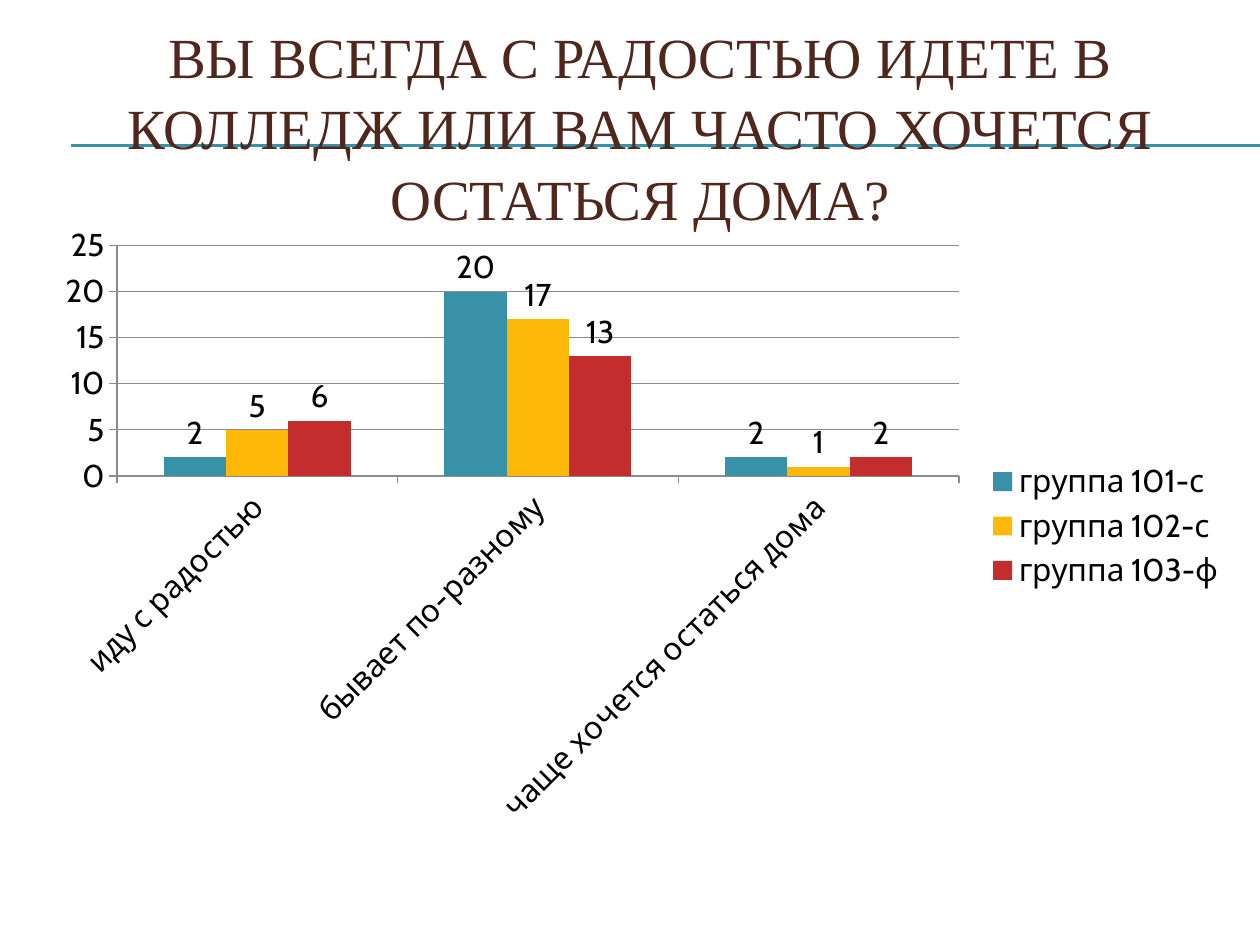
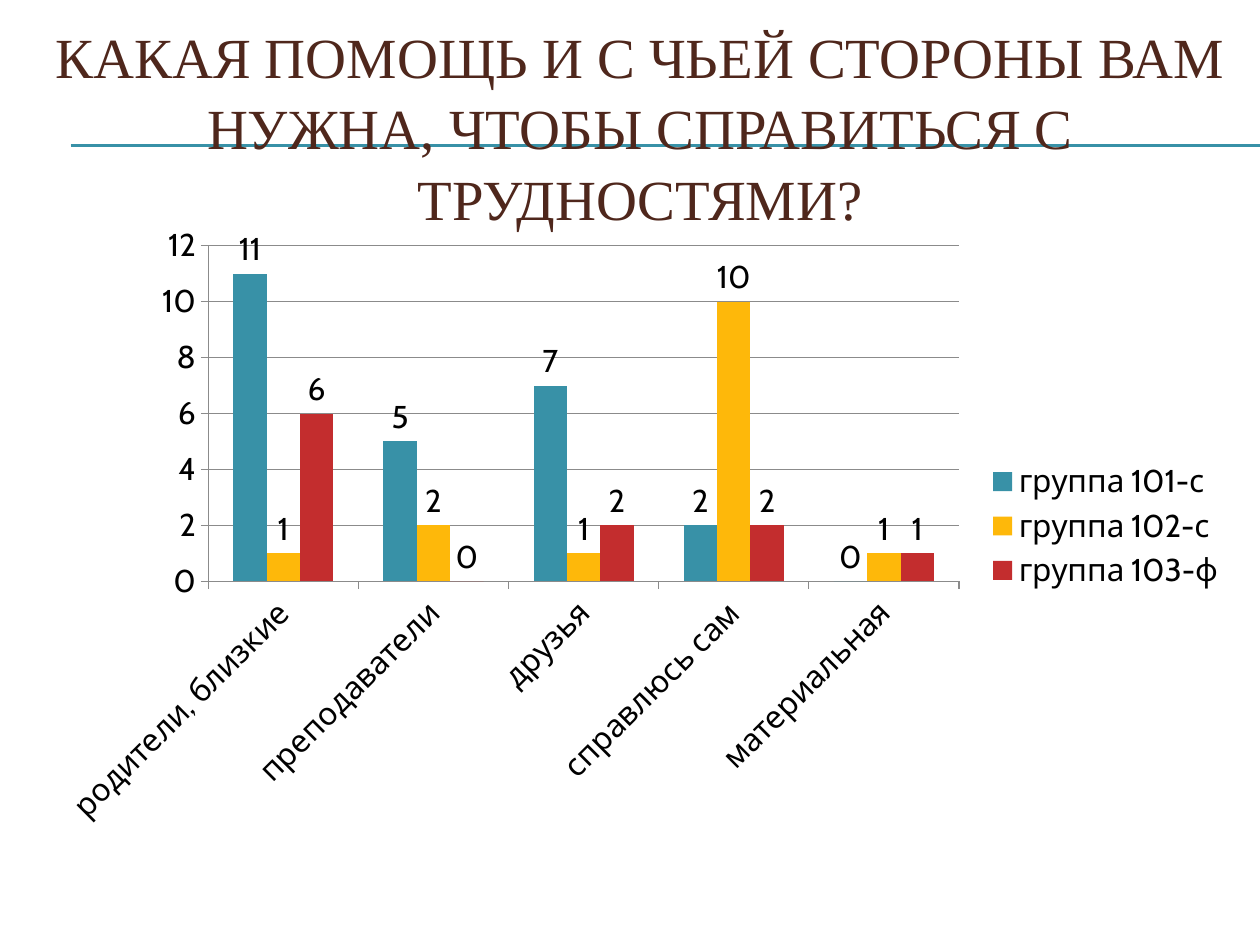
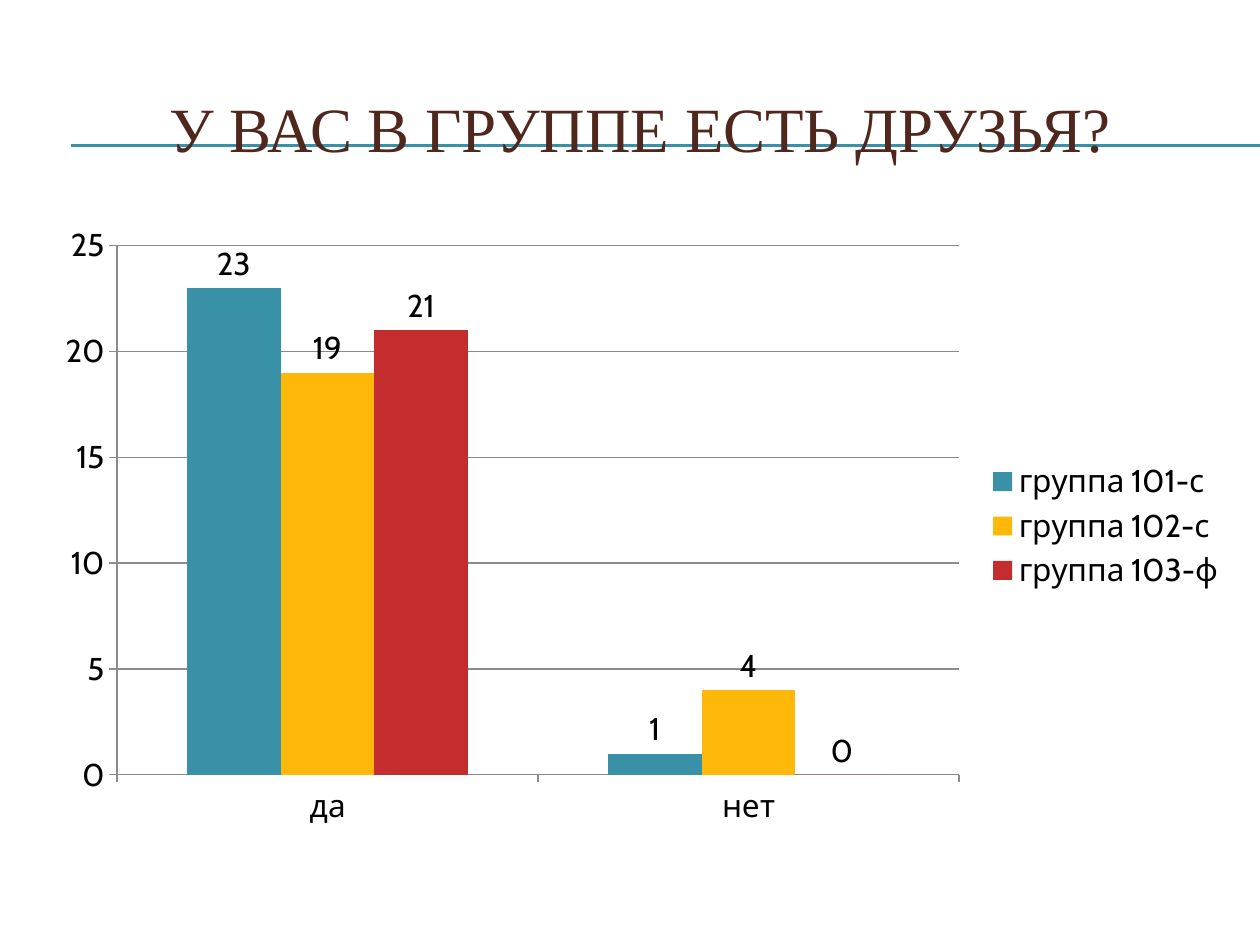
from dataclasses import dataclass

from lxml import etree
from pptx import Presentation
from pptx.chart.data import CategoryChartData
from pptx.dml.color import RGBColor
from pptx.enum.chart import (
    XL_CHART_TYPE,
    XL_LABEL_POSITION,
    XL_LEGEND_POSITION,
    XL_TICK_MARK,
)
from pptx.enum.shapes import MSO_CONNECTOR
from pptx.enum.text import MSO_ANCHOR, MSO_AUTO_SIZE, PP_ALIGN
from pptx.oxml.ns import qn
from pptx.util import Inches, Pt

COLUMNS = XL_CHART_TYPE.COLUMN_CLUSTERED
ABOVE = XL_LABEL_POSITION.OUTSIDE_END
RIGHT = XL_LEGEND_POSITION.RIGHT
OUTER = XL_TICK_MARK.OUTSIDE
STRAIGHT = MSO_CONNECTOR.STRAIGHT
MIDDLE = MSO_ANCHOR.MIDDLE
FIXED = MSO_AUTO_SIZE.NONE
CENTER = PP_ALIGN.CENTER

TEAL = "3891A7"
GOLD = "FEB80A"
RED = "C32D2E"
BROWN = "4F271C"
BLACK = "000000"
GRAY = "8B8B8B"

SERIF = "Times New Roman"
SANS = "Cabin"
LEFT = Inches(0.33)
WIDTH = Inches(9.5)
GROUPS = (("группа 101-с", TEAL), ("группа 102-с", GOLD), ("группа 103-ф", RED))


@dataclass(frozen=True)
class Survey:
    title: str
    size: float
    answers: dict[str, tuple[int, int, int]]
    top: int
    step: int


SURVEYS = (
    Survey(
        "ВЫ ВСЕГДА С РАДОСТЬЮ ИДЕТЕ В КОЛЛЕДЖ ИЛИ ВАМ ЧАСТО ХОЧЕТСЯ ОСТАТЬСЯ ДОМА?",
        32.4,
        {
            "иду с радостью": (2, 5, 6),
            "бывает по-разному": (20, 17, 13),
            "чаще хочется остаться дома": (2, 1, 2),
        },
        25,
        5,
    ),
    Survey(
        "КАКАЯ ПОМОЩЬ И С ЧЬЕЙ СТОРОНЫ ВАМ НУЖНА, ЧТОБЫ СПРАВИТЬСЯ С ТРУДНОСТЯМИ?",
        32.4,
        {
            "родители, близкие": (11, 1, 6),
            "преподаватели": (5, 2, 0),
            "друзья": (7, 1, 2),
            "справлюсь сам": (2, 10, 2),
            "материальная": (0, 1, 1),
        },
        12,
        2,
    ),
    Survey(
        "У ВАС В ГРУППЕ ЕСТЬ ДРУЗЬЯ?",
        36,
        {"да": (23, 19, 21), "нет": (1, 4, 0)},
        25,
        5,
    ),
)


def paint(target, color: str) -> None:
    target.solid()
    target.fore_color.rgb = RGBColor.from_string(color)


def style(font, name: str, size: float, color: str) -> None:
    font.name = name
    font.size = Pt(size)
    font.bold = False
    paint(font.fill, color)


def draw_rules(slide) -> None:
    for index, y in enumerate((1.15, 1.16)):
        rule = slide.shapes.add_connector(
            STRAIGHT, Inches(0.56), Inches(y), Inches(10), Inches(y)
        )
        paint(rule.line.fill, TEAL)
        rule.line.width = Pt(0.75)
        etree.SubElement(rule._element.spPr, qn("a:effectLst"))
        slide.shapes._spTree.insert(2 + index, rule._element)


def draw_title(slide, survey: Survey) -> None:
    title = slide.shapes.title
    title.left, title.top = LEFT, Inches(0.5)
    title.width, title.height = WIDTH, Inches(0.92)
    frame = title.text_frame
    frame.text = survey.title
    frame.word_wrap = True
    frame.auto_size = FIXED
    frame.vertical_anchor = MIDDLE
    frame.margin_top = Inches(0.12)
    line = frame.paragraphs[0]
    line.alignment = CENTER
    line.line_spacing = 1.04
    style(line.runs[0].font, SERIF, survey.size, BROWN)


def draw_chart(slide, survey: Survey) -> None:
    data = CategoryChartData()
    data.categories = list(survey.answers)
    for (name, _), counts in zip(GROUPS, zip(*survey.answers.values())):
        data.add_series(name, counts)
    chart = slide.shapes.add_chart(
        COLUMNS, LEFT, Inches(1.7), WIDTH, Inches(4.95), data
    ).chart
    style(chart.font, SANS, 18, BLACK)
    chart.has_title = False
    chart.has_legend = True
    chart.legend.position = RIGHT
    chart.legend.include_in_layout = False

    plot = chart.plots[0]
    plot.vary_by_categories = False
    plot.gap_width = 150
    plot.overlap = 0
    for series, (_, color) in zip(plot.series, GROUPS):
        paint(series.format.fill, color)
        series.invert_if_negative = False
        labels = series.data_labels
        labels.show_value = True
        labels.position = ABOVE

    scale = chart.value_axis
    scale.minimum_scale = 0
    scale.maximum_scale = survey.top
    scale.major_unit = survey.step
    scale.has_major_gridlines = True
    paint(scale.major_gridlines.format.line.fill, GRAY)
    for axis in (chart.category_axis, scale):
        axis.major_tick_mark = OUTER
        paint(axis.format.line.fill, GRAY)


def main() -> None:
    deck = Presentation()
    deck.slide_width, deck.slide_height = Inches(10), Inches(7.5)
    for survey in SURVEYS:
        slide = deck.slides.add_slide(deck.slide_layouts[5])
        draw_rules(slide)
        draw_title(slide, survey)
        draw_chart(slide, survey)
    deck.save("out.pptx")


if __name__ == "__main__":
    main()
